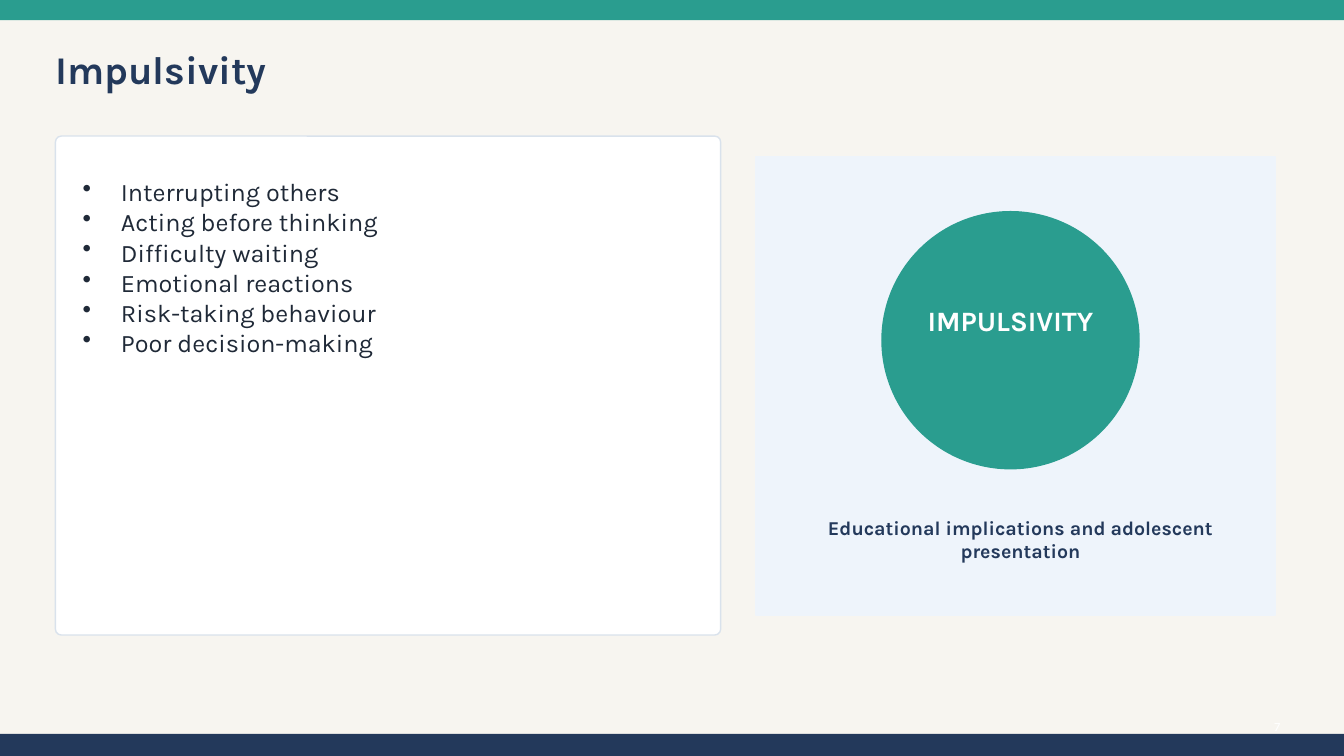
from lxml.etree import SubElement
from pptx import Presentation
from pptx.dml.color import RGBColor
from pptx.enum.shapes import MSO_SHAPE as Preset
from pptx.enum.text import MSO_ANCHOR as Anchor, PP_ALIGN as Align
from pptx.oxml.ns import qn
from pptx.util import Pt

TITLE = "Impulsivity"
SIGNS = [
    "Interrupting others",
    "Acting before thinking",
    "Difficulty waiting",
    "Emotional reactions",
    "Risk-taking behaviour",
    "Poor decision-making",
]
BADGE = "IMPULSIVITY"
CAPTION = "Educational implications and adolescent presentation"
PAGE_NUMBER = "7"

FONT = "Karla"
COLORS = {
    "paper": "F7F5F0",
    "teal": "2A9D8F",
    "navy": "23395B",
    "white": "FFFFFF",
    "border": "D9E2EC",
    "ink": "1F2937",
    "mist": "EEF4FB",
}
WIDTH, HEIGHT = 960, 540
TOP_BAR, BOTTOM_BAR = 14.4, 15.84
BULLET_INDENT = 27.36


def color(name):
    return RGBColor.from_string(COLORS[name])


def add_panel(page, preset, place, fill, line=None):
    panel = page.shapes.add_shape(preset, *map(Pt, place))
    panel.shadow.inherit = False
    panel.fill.solid()
    panel.fill.fore_color.rgb = color(fill)
    if line:
        panel.line.color.rgb = color(line)
        panel.line.width = Pt(1)
    else:
        panel.line.fill.background()
    return panel


def add_bullet(para):
    properties = para._p.get_or_add_pPr()
    properties.set("marL", str(Pt(BULLET_INDENT)))
    properties.set("indent", str(-Pt(BULLET_INDENT)))
    SubElement(properties, qn("a:buChar")).set("char", "•")


def add_text(page, place, lines, size, ink, bold=False, align=Align.LEFT,
             anchor=Anchor.MIDDLE, bullets=False):
    frame = page.shapes.add_textbox(*map(Pt, place)).text_frame
    frame.word_wrap = True
    frame.vertical_anchor = anchor
    frame.margin_left = frame.margin_top = frame.margin_right = frame.margin_bottom = 0
    for index, line in enumerate(lines):
        para = frame.add_paragraph() if index else frame.paragraphs[0]
        para.alignment = align
        if bullets:
            add_bullet(para)
        span = para.add_run()
        span.text = line
        span.font.name = FONT
        span.font.size = Pt(size)
        span.font.bold = bold
        span.font.color.rgb = color(ink)


def main():
    deck = Presentation()
    deck.slide_width, deck.slide_height = Pt(WIDTH), Pt(HEIGHT)
    page = deck.slides.add_slide(deck.slide_layouts[6])
    page.background.fill.solid()
    page.background.fill.fore_color.rgb = color("paper")

    add_panel(page, Preset.RECTANGLE, (0, 0, WIDTH, TOP_BAR), "teal")
    add_panel(page, Preset.RECTANGLE, (0, HEIGHT - BOTTOM_BAR, WIDTH, BOTTOM_BAR), "navy")
    add_text(page, (889.2, 512.64, 25.2, 12.96), [PAGE_NUMBER], 9, "white", align=Align.RIGHT)
    add_text(page, (39.6, 27.36, 633.6, 43.2), [TITLE], 28, "navy", bold=True)

    card = add_panel(page, Preset.ROUNDED_RECTANGLE, (39.6, 97.2, 475.2, 356.4), "white", "border")
    card.adjustments[0] = 0.012
    add_text(page, (59.04, 126, 428.4, 306), SIGNS, 18, "ink", anchor=Anchor.TOP, bullets=True)

    add_panel(page, Preset.RECTANGLE, (540, 111.6, 370.8, 327.6), "mist", "mist")
    add_panel(page, Preset.OVAL, (630, 151.2, 183.6, 183.6), "teal", "teal")
    add_text(page, (644.4, 212.4, 154.8, 32.4), [BADGE], 20, "white", bold=True, align=Align.CENTER)
    add_text(page, (576, 360, 306, 50.4), [CAPTION], 14, "navy", bold=True, align=Align.CENTER)

    deck.save("out.pptx")


if __name__ == "__main__":
    main()
